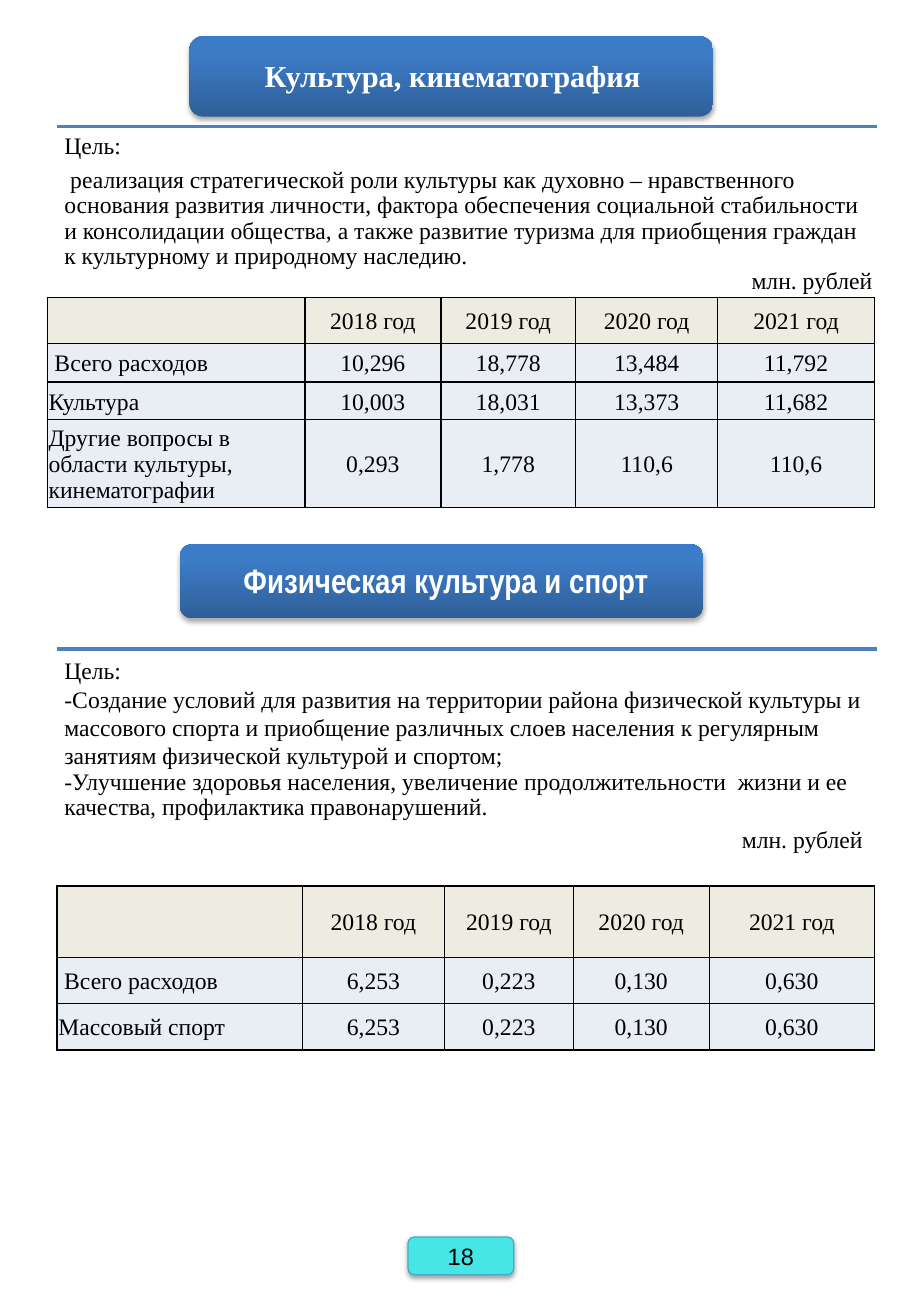
from copy import deepcopy
from dataclasses import dataclass

from lxml import etree
from pptx import Presentation, util as u
from pptx.dml.color import RGBColor
from pptx.enum import shapes as kinds, text
from pptx.oxml.ns import qn

COLUMNS, ROWS = 75, 108.3
WIDTH, HEIGHT = u.Inches(7.5), u.Inches(10.83)


@dataclass(frozen=True)
class Theme:
    serif: str = "Times New Roman"
    narrow: str = "Arial Narrow"
    sans: str = "Arial"
    body_size: int = 14
    culture_size: int = 18
    sport_size: int = 20
    ink: str = "000000"
    light: str = "FFFFFF"
    rule: str = "4F81BD"
    header_fill: str = "EEECE1"
    row_fill: str = "E9EDF4"
    page_fill: str = "46E6E6"
    page_edge: str = "46AAC5"
    plate: tuple = ((0, "2F5F99"), (0.8, "3D7CC7"), (1, "3A7CCB"))


THEME = Theme()
LEFT, CENTER, RIGHT = text.PP_ALIGN.LEFT, text.PP_ALIGN.CENTER, text.PP_ALIGN.RIGHT
MIDDLE = text.MSO_ANCHOR.MIDDLE
YEARS = ("", "2018 год", "2019 год", "2020 год", "2021 год")
UNIT_LABEL = "млн. рублей"

CULTURE_GOAL = (
    ("Цель:", True),
    (" реализация стратегической роли культуры как духовно – нравственного "
     "основания развития личности, фактора обеспечения социальной стабильности "
     "и консолидации общества, а также развитие туризма для приобщения граждан "
     "к культурному и природному наследию.", True),
)
CULTURE_COSTS = (
    YEARS,
    (" Всего расходов", "10,296", "18,778", "13,484", "11,792"),
    ("Культура", "10,003", "18,031", "13,373", "11,682"),
    ("Другие вопросы в области культуры, кинематографии",
     "0,293", "1,778", "110,6", "110,6"),
)
SPORT_GOAL = (
    ("Цель:", False),
    ("-Создание условий для развития на территории района физической культуры и "
     "массового спорта и приобщение различных слоев населения к регулярным "
     "занятиям физической культурой и спортом;", False),
    ("-Улучшение здоровья населения, увеличение продолжительности  жизни и ее "
     "качества, профилактика правонарушений.", True),
)
SPORT_COSTS = (
    YEARS,
    (" Всего расходов", "6,253", "0,223", "0,130", "0,630"),
    ("Массовый спорт", "6,253", "0,223", "0,130", "0,630"),
)


def across(columns):
    return round(WIDTH * columns / COLUMNS)


def down(rows):
    return round(HEIGHT * rows / ROWS)


def area(left, top, width, height):
    return across(left), down(top), across(width), down(height)


def color(code):
    return RGBColor.from_string(code)


def set_margins(holder, left, top, right, bottom):
    holder.margin_left, holder.margin_right = u.Inches(left), u.Inches(right)
    holder.margin_top, holder.margin_bottom = u.Inches(top), u.Inches(bottom)


def write(paragraph, words, align=LEFT, size=THEME.body_size, face=THEME.serif,
          ink=THEME.ink, bold=False, tight=False):
    paragraph.alignment = align
    if tight:
        paragraph.line_spacing = 0.9
        paragraph.space_after = u.Pt(round(size * 0.35))
    run = paragraph.add_run()
    run.text = words
    run.font.size, run.font.name, run.font.bold = u.Pt(size), face, bold
    run.font.color.rgb = color(ink)


def cast_shadow(shape, opacity, blur, distance):
    shape.shadow.inherit = False
    effects = shape.element.spPr.find(qn("a:effectLst"))
    shadow = etree.SubElement(
        effects, qn("a:outerShdw"), blurRad=str(u.Pt(blur)),
        dist=str(u.Pt(distance)), dir="5400000", rotWithShape="0")
    shade = etree.SubElement(shadow, qn("a:srgbClr"), val=THEME.ink)
    etree.SubElement(shade, qn("a:alpha"), val=str(opacity * 1000))


def add_plate(slide, place):
    plate = slide.shapes.add_shape(kinds.MSO_SHAPE.ROUNDED_RECTANGLE, *area(*place))
    plate.fill.gradient()
    plate.fill.gradient_angle = 90
    stops = plate.element.spPr.find(".//" + qn("a:gsLst"))
    stops.append(deepcopy(stops[-1]))
    for stop, (position, code) in zip(plate.fill.gradient_stops, THEME.plate):
        stop.position, stop.color.rgb = position, color(code)
    plate.line.fill.background()
    cast_shadow(plate, 35, 3.1, 1.8)
    return plate


def fill_heading(heading, place, inset, words, size, face):
    heading.left, heading.top, heading.width, heading.height = area(*place)
    frame = heading.text_frame
    frame.word_wrap, frame.vertical_anchor = True, MIDDLE
    frame.auto_size = text.MSO_AUTO_SIZE.NONE
    set_margins(frame, *[inset] * 4)
    write(frame.paragraphs[0], words, CENTER, size, face, THEME.light, True, True)


def add_rule(slide, top):
    rule = slide.shapes.add_connector(
        kinds.MSO_CONNECTOR.STRAIGHT, across(4.7), down(top), across(72.2), down(top))
    rule.line.color.rgb = color(THEME.rule)
    rule.line.width = u.Pt(2)
    etree.SubElement(rule.element.spPr, qn("a:effectLst"))


def add_goal(slide, top, height, goal):
    add_rule(slide, top)
    frame = slide.shapes.add_textbox(*area(4.7, top, 67.5, height)).text_frame
    frame.word_wrap = True
    set_margins(frame, *[0.06] * 4)
    for index, (words, tight) in enumerate(goal):
        paragraph = frame.add_paragraph() if index else frame.paragraphs[0]
        write(paragraph, words, tight=tight)


def add_unit_label(slide, left, top):
    frame = slide.shapes.add_textbox(*area(left, top, 14.2, 3.4)).text_frame
    frame.word_wrap = True
    write(frame.paragraphs[0], UNIT_LABEL, RIGHT)


def outline(cell):
    properties = cell._tc.get_or_add_tcPr()
    for side in ("lnL", "lnR", "lnT", "lnB"):
        edge = etree.SubElement(properties, qn("a:" + side), w=str(u.Pt(1)))
        paint = etree.SubElement(edge, qn("a:solidFill"))
        etree.SubElement(paint, qn("a:srgbClr"), val=THEME.ink)


def add_costs(slide, left, top, widths, heights, costs):
    table = slide.shapes.add_table(
        len(heights), len(widths), *area(left, top, sum(widths), sum(heights))).table
    table.first_row = table.horz_banding = False
    for column, width in zip(table.columns, widths):
        column.width = across(width)
    for row, height in zip(table.rows, heights):
        row.height = down(height)
    for r, entries in enumerate(costs):
        for c, words in enumerate(entries):
            cell = table.cell(r, c)
            outline(cell)
            cell.fill.solid()
            cell.fill.fore_color.rgb = color(THEME.row_fill if r else THEME.header_fill)
            cell.vertical_anchor = MIDDLE
            set_margins(cell, 0.01, 0.02, 0.01, 0)
            if words:
                write(cell.text_frame.paragraphs[0], words, CENTER if c else LEFT)


def add_page_number(slide, number):
    badge = slide.shapes.add_shape(
        kinds.MSO_SHAPE.FLOWCHART_ALTERNATE_PROCESS, *area(33.6, 101.8, 8.7, 3.1))
    badge.fill.solid()
    badge.fill.fore_color.rgb = color(THEME.page_fill)
    badge.line.color.rgb = color(THEME.page_edge)
    badge.line.width = u.Pt(0.75)
    cast_shadow(badge, 38, 3.1, 1.6)
    badge.text_frame.vertical_anchor = MIDDLE
    write(badge.text_frame.paragraphs[0], number, CENTER, face=THEME.sans)


def main():
    deck = Presentation()
    deck.slide_width, deck.slide_height = WIDTH, HEIGHT
    slide = deck.slides.add_slide(deck.slide_layouts.get_by_name("Title Only"))

    culture_plate = add_plate(slide, (15.6, 3, 43.1, 6.6))
    culture_title = slide.shapes.title
    culture_plate.element.addnext(culture_title.element)
    fill_heading(culture_title, (16, 3.4, 42.5, 5.9), 0.07,
                 "Культура, кинематография", THEME.culture_size, THEME.serif)
    add_goal(slide, 10.4, 20.5, CULTURE_GOAL)
    add_costs(slide, 3.9, 24.5, (21.2, 11.2, 11.1, 11.7, 12.9),
              (3.75, 3.2, 3.1, 7.2), CULTURE_COSTS)
    add_unit_label(slide, 58.6, 21.4)

    add_plate(slide, (14.8, 44.8, 43.1, 6.1))
    sport_place = (15.3, 45.2, 42.2, 5.5)
    fill_heading(slide.shapes.add_textbox(*area(*sport_place)), sport_place, 0.08,
                 " Физическая культура и спорт", THEME.sport_size, THEME.narrow)
    add_goal(slide, 53.4, 17.1, SPORT_GOAL)
    add_costs(slide, 4.7, 72.9, (20.2, 11.7, 10.6, 11.2, 13.6),
              (5.9, 3.8, 3.8), SPORT_COSTS)
    add_unit_label(slide, 57.8, 67.4)

    add_page_number(slide, "18")
    deck.save("out.pptx")


if __name__ == "__main__":
    main()
